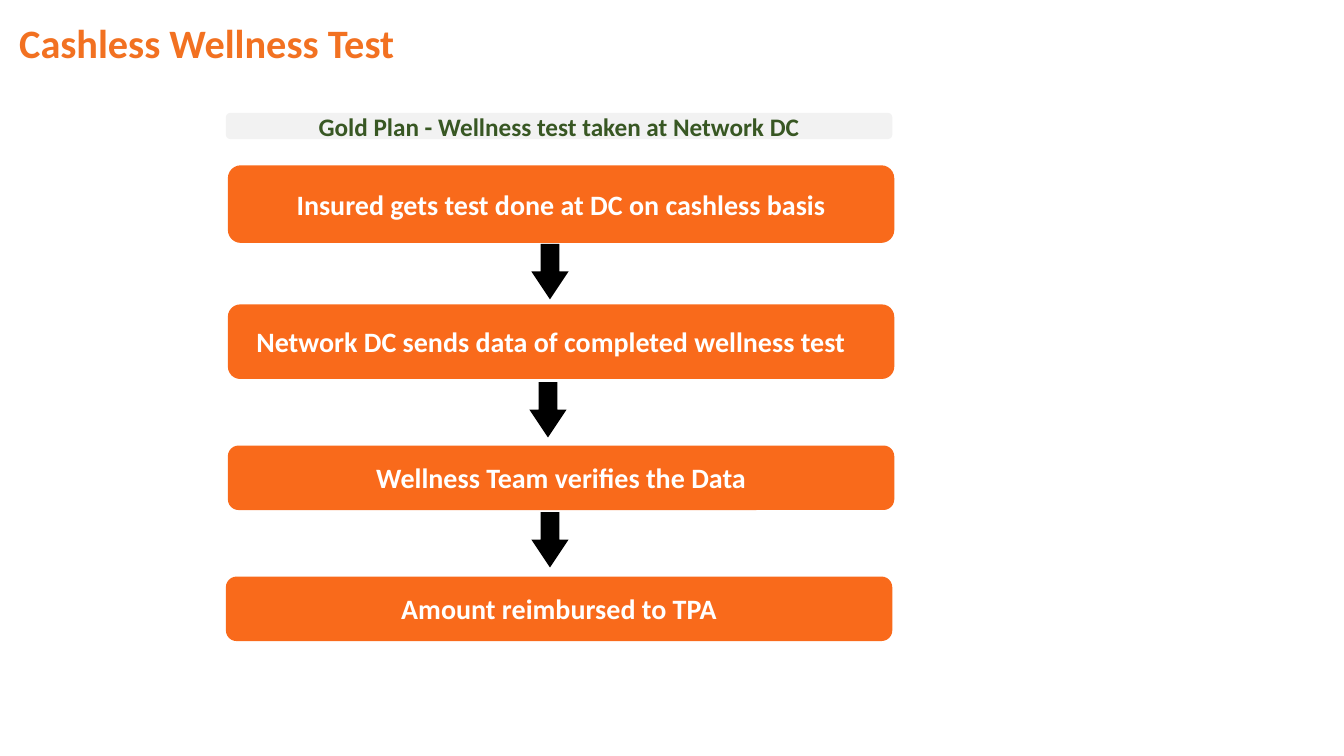
from pptx import Presentation
from pptx.dml.color import RGBColor
from pptx.enum.shapes import MSO_SHAPE
from pptx.enum.text import MSO_ANCHOR, MSO_AUTO_SIZE, PP_ALIGN
from pptx.util import Inches, Pt

ROUNDED = MSO_SHAPE.ROUNDED_RECTANGLE
DOWN_ARROW = MSO_SHAPE.DOWN_ARROW
MIDDLE = MSO_ANCHOR.MIDDLE
NO_FIT = MSO_AUTO_SIZE.NONE
LEFT = PP_ALIGN.LEFT
CENTER = PP_ALIGN.CENTER

TITLE_ORANGE = RGBColor(0xF2, 0x71, 0x21)
STEP_ORANGE = RGBColor(0xF9, 0x6A, 0x1B)
PLAN_GREY = RGBColor(0xF2, 0xF2, 0xF2)
PLAN_GREEN = RGBColor(0x38, 0x57, 0x23)
WHITE = RGBColor(0xFF, 0xFF, 0xFF)
BLACK = RGBColor(0x00, 0x00, 0x00)


def add_filled_shape(kind, left, top, width, height, fill):
    shape = page.shapes.add_shape(
        kind, Inches(left), Inches(top), Inches(width), Inches(height))
    shape.shadow.inherit = False
    shape.fill.solid()
    shape.fill.fore_color.rgb = fill
    shape.line.fill.background()
    return shape


def write_text(box, text, size, color, alignment):
    frame = box.text_frame
    frame.word_wrap = True
    frame.vertical_anchor = MIDDLE
    para = frame.paragraphs[0]
    para.alignment = alignment
    span = para.add_run()
    span.text = text
    font_format = {"name": "Calibri", "size": Pt(size), "bold": True}
    for name, value in font_format.items():
        setattr(span.font, name, value)
    span.font.color.rgb = color


deck = Presentation()
deck.slide_width = Inches(13.33)
deck.slide_height = Inches(7.5)
page = deck.slides.add_slide(deck.slide_layouts[5])

title = page.shapes.title
title_format = {"left": 0.12, "top": 0.19, "width": 12, "height": 0.53}
for name, value in title_format.items():
    setattr(title, name, Inches(value))
title_frame = title.text_frame
title_frame.auto_size = NO_FIT
title_insets = {"margin_left": 0.07, "margin_right": 0.07,
                "margin_top": 0.04, "margin_bottom": 0.04}
for name, value in title_insets.items():
    setattr(title_frame, name, Inches(value))
write_text(title, "Cashless Wellness Test", 28.8, TITLE_ORANGE, LEFT)
title_frame.paragraphs[0].line_spacing = 0.9

BOX_WIDTH = 6.61
plan = add_filled_shape(ROUNDED, 2.24, 1.12, BOX_WIDTH, 0.26, PLAN_GREY)
write_text(plan, "Gold Plan - Wellness test taken at Network DC",
           18, PLAN_GREEN, CENTER)

steps = [
    ("Insured gets test done at DC on cashless basis", 2.26, 1.64, 0.77, 0.1),
    ("Network DC sends data of completed wellness test", 2.26, 3.02, 0.74, 0.3),
    ("Wellness Team verifies the Data", 2.26, 4.42, 0.64, 0.1),
    ("Amount reimbursed to TPA", 2.24, 5.72, 0.64, 0.1),
]
for text, left, top, height, right_inset in steps:
    step = add_filled_shape(ROUNDED, left, top, BOX_WIDTH, height, STEP_ORANGE)
    step.text_frame.margin_right = Inches(right_inset)
    write_text(step, text, 20, WHITE, CENTER)

for left, top in [(5.27, 2.42), (5.25, 3.79), (5.27, 5.08)]:
    arrow = add_filled_shape(DOWN_ARROW, left, top, 0.37, 0.55, BLACK)
    arrow.adjustments[0] = 0.5
    arrow.adjustments[1] = 0.75

deck.save("out.pptx")
